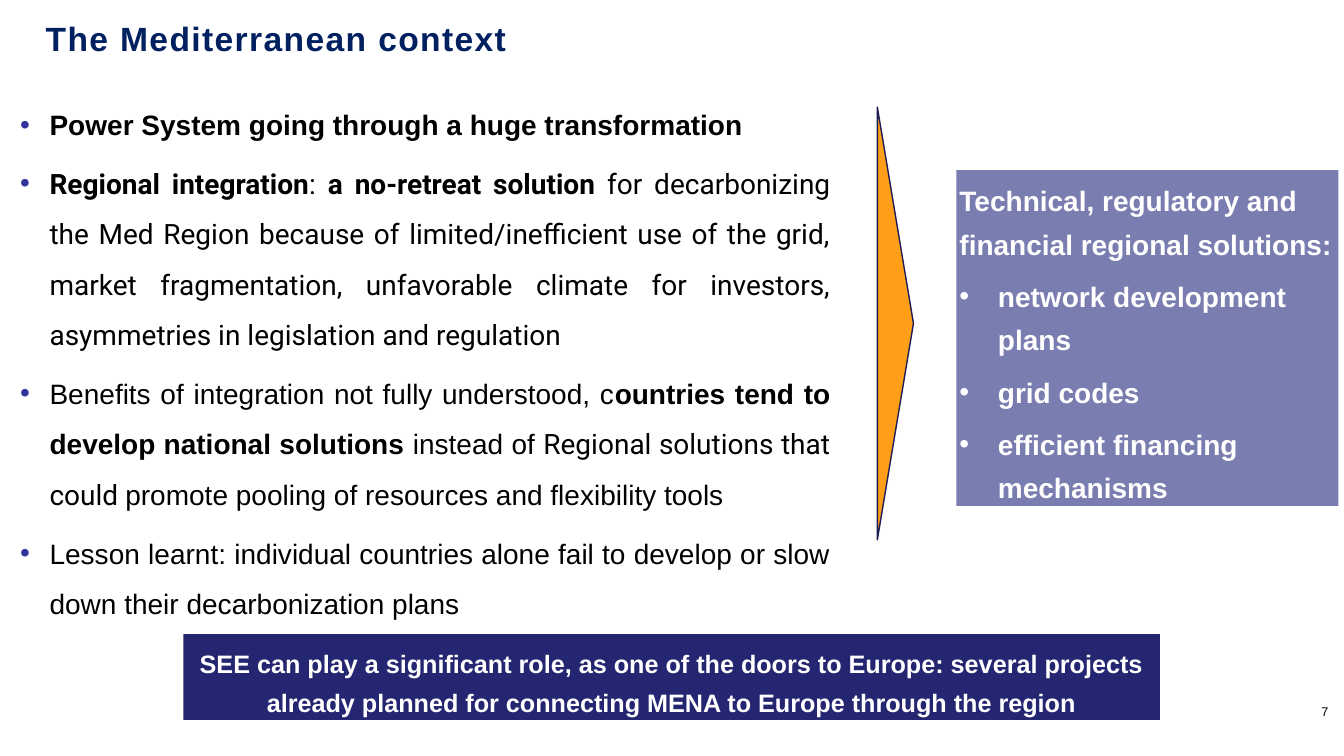
from lxml.etree import SubElement
from pptx import Presentation
from pptx.dml.color import RGBColor
from pptx.enum.shapes import MSO_SHAPE
from pptx.enum.text import MSO_ANCHOR, MSO_AUTO_SIZE, PP_ALIGN
from pptx.oxml.ns import qn
from pptx.util import Cm, Pt

NAVY = RGBColor(0x00, 0x20, 0x60)
BLACK = RGBColor(0x00, 0x00, 0x00)
WHITE = RGBColor(0xFF, 0xFF, 0xFF)
BULLET_BLUE = RGBColor(0x32, 0x34, 0x9A)
LAVENDER = RGBColor(0x79, 0x7D, 0xB0)
ORANGE = RGBColor(0xFF, 0x9E, 0x18)
OUTLINE = RGBColor(0x1C, 0x1D, 0x55)
INDIGO = RGBColor(0x25, 0x26, 0x71)

# Each paragraph is a list of runs: (text, bold, font name)
TITLE = [[("The Mediterranean context", True, "Arial")]]
CONTEXT = [
    [("Power System going through a huge transformation", True, "Arial")],
    [("Regional integration", True, "Roboto"),
     (": ", False, "Roboto"),
     ("a no-retreat solution ", True, "Roboto"),
     ("for decarbonizing the Med Region because of limited/inefficient use of the grid, "
      "market fragmentation, unfavorable climate for investors, "
      "asymmetries in legislation and regulation", False, "Roboto")],
    [("Benefits of integration not fully understood, c", False, "Arial"),
     ("ountries tend to develop national solutions ", True, "Arial"),
     ("instead of ", False, "Arial"),
     ("Regional solutions that could ", False, "Roboto"),
     ("promote pooling of resources and flexibility tools", False, "Arial")],
    [("Lesson learnt: individual countries alone fail to develop or slow down "
      "their decarbonization plans", False, "Arial")],
]
SOLUTIONS = [[(text, True, "Arial")] for text in (
    "Technical, regulatory and financial regional solutions:",
    "network development plans",
    "grid codes",
    "efficient financing mechanisms",
)]
CONCLUSION = [[("SEE can play a significant role, as one of the doors to Europe: several projects "
                "already planned for connecting MENA to Europe through the region", True, "Arial")]]
PAGE_NUMBER = [[("7", False, "Arial")]]

# Left, top, width, height in centimetres
TITLE_BOX = (1.07, 0.48, 24.61, 1.07)
CONTEXT_BOX = (0.51, 2.29, 20.42, 12.32)
SOLUTIONS_BOX = (23.93 + 0.17, 4.29, 9.63, 8.46)
ARROW_BOX = (22.11, 2.7, 0.91, 10.9)
CONCLUSION_BOX = (4.62, 15.98, 24.61, 2.16)
NUMBER_BOX = (33.15, 17.6, 0.69, 0.66)


def lengths(box):
    return [Cm(value) for value in box]


def add_bullet(paragraph, indent, color):
    properties = paragraph._p.get_or_add_pPr()
    properties.set("marL", str(Cm(indent)))
    properties.set("indent", str(-Cm(indent)))
    bullet_color = SubElement(properties, qn("a:buClr"))
    SubElement(bullet_color, qn("a:srgbClr"), val=str(color))
    SubElement(properties, qn("a:buFont"), typeface="Arial")
    SubElement(properties, qn("a:buChar"), char="•")


def write_text(shape, paragraphs, *, size, color, line_spacing=1.0, align=PP_ALIGN.LEFT,
               margins=(0.08, 0.08), anchor=MSO_ANCHOR.TOP, wrap=True, tracking=None,
               first_bullet=None, indent=0, bullet_color=WHITE):
    """Fill a shape; paragraphs from index first_bullet onwards are bulleted."""
    frame = shape.text_frame
    frame.auto_size = MSO_AUTO_SIZE.NONE
    frame.word_wrap = wrap
    frame.vertical_anchor = anchor
    frame.margin_left = frame.margin_right = Cm(margins[0])
    frame.margin_top = frame.margin_bottom = Cm(margins[1])
    for index, runs in enumerate(paragraphs):
        paragraph = frame.add_paragraph() if index else frame.paragraphs[0]
        if first_bullet is not None and index >= first_bullet:
            add_bullet(paragraph, indent, bullet_color)
        paragraph.alignment = align
        paragraph.line_spacing = line_spacing
        paragraph.space_before = Pt(6 if index else 0)
        for text, bold, font_name in runs:
            run = paragraph.add_run()
            run.text = text
            run.font.name = font_name
            run.font.size = Pt(size)
            run.font.bold = bold
            run.font.color.rgb = color
            if tracking:
                run.font._element.set("spc", str(tracking))


def add_filled(slide, kind, box, fill, line=None):
    shape = slide.shapes.add_shape(kind, *lengths(box))
    shape.shadow.inherit = False
    shape.fill.solid()
    shape.fill.fore_color.rgb = fill
    if line is None:
        shape.line.fill.background()
    else:
        shape.line.color.rgb = line
        shape.line.width = Pt(1)
    return shape


def main():
    presentation = Presentation()
    presentation.slide_width, presentation.slide_height = Cm(33.87), Cm(19.05)
    slide = presentation.slides.add_slide(presentation.slide_layouts[5])

    title = slide.shapes.title
    title.left, title.top, title.width, title.height = lengths(TITLE_BOX)
    write_text(title, TITLE, size=24, color=NAVY, line_spacing=0.9, tracking=100)

    context = slide.shapes.add_textbox(*lengths(CONTEXT_BOX))
    write_text(context, CONTEXT, size=20, color=BLACK, line_spacing=1.5,
               align=PP_ALIGN.JUSTIFY, margins=(0, 0), first_bullet=0,
               indent=0.74, bullet_color=BULLET_BLUE)

    solutions = add_filled(slide, MSO_SHAPE.RECTANGLE, SOLUTIONS_BOX, LAVENDER)
    write_text(solutions, SOLUTIONS, size=20, color=WHITE, line_spacing=1.3,
               first_bullet=1, indent=0.97)

    # A quarter turn swaps width and height around the same centre
    left, top, width, height = ARROW_BOX
    upright = (left + (width - height) / 2, top + (height - width) / 2, height, width)
    arrow = add_filled(slide, MSO_SHAPE.ISOSCELES_TRIANGLE, upright, ORANGE, OUTLINE)
    arrow.rotation = 90

    conclusion = add_filled(slide, MSO_SHAPE.RECTANGLE, CONCLUSION_BOX, INDIGO)
    write_text(conclusion, CONCLUSION, size=18, color=WHITE, line_spacing=1.3,
               align=PP_ALIGN.CENTER, margins=(0.25, 0.13))

    number = slide.shapes.add_textbox(*lengths(NUMBER_BOX))
    write_text(number, PAGE_NUMBER, size=9, color=BLACK, margins=(0.15, 0.15),
               anchor=MSO_ANCHOR.BOTTOM, wrap=False)

    presentation.save("out.pptx")


if __name__ == "__main__":
    main()
